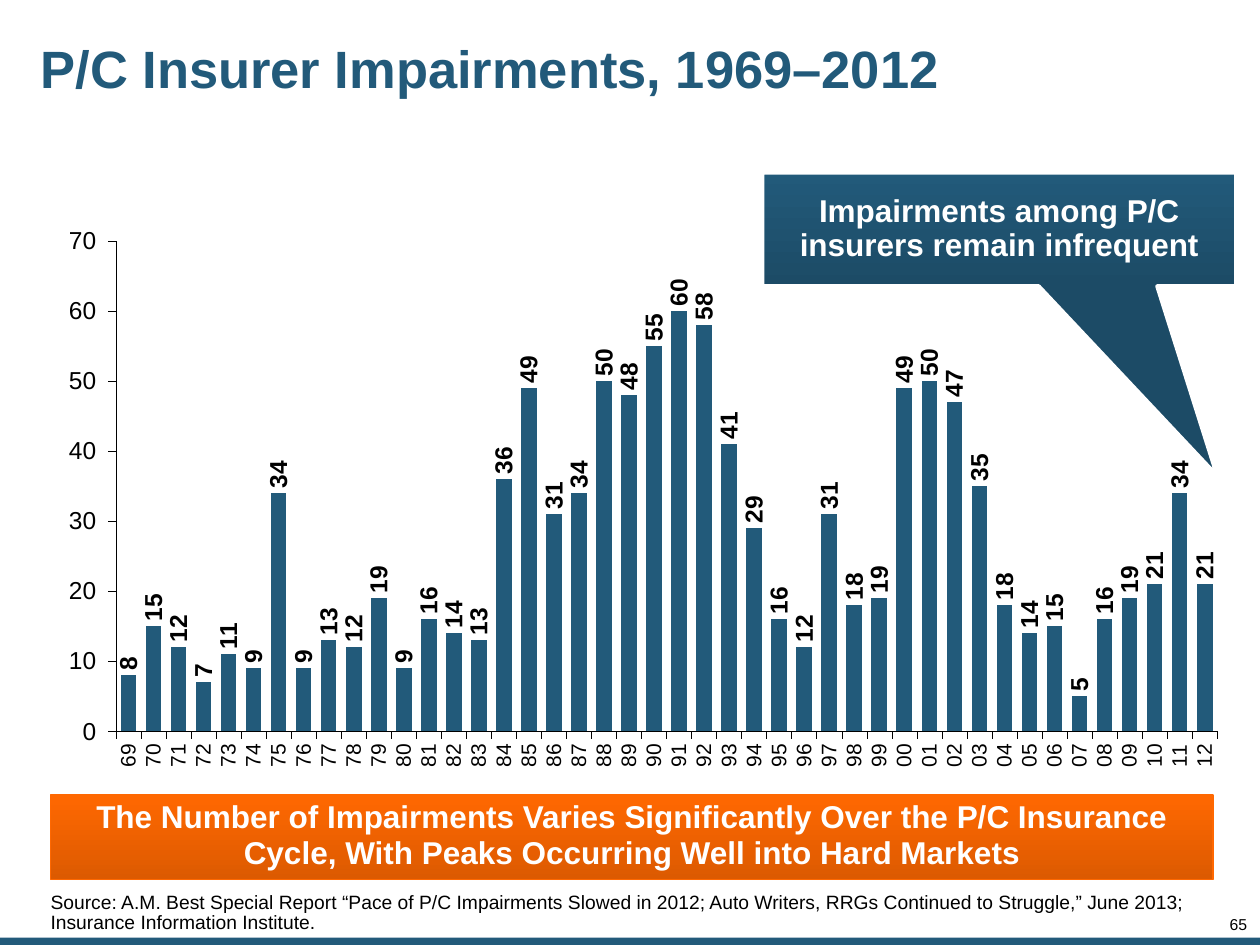
from lxml import etree
from pptx import Presentation
from pptx.chart.data import CategoryChartData
from pptx.dml.color import RGBColor
from pptx.enum.chart import XL_CHART_TYPE, XL_LABEL_POSITION, XL_TICK_MARK
from pptx.enum.shapes import MSO_SHAPE
from pptx.enum.text import MSO_ANCHOR, PP_ALIGN
from pptx.oxml import parse_xml
from pptx.oxml.ns import nsdecls
from pptx.util import Cm, Pt

LEFT, CENTER, RIGHT = PP_ALIGN.LEFT, PP_ALIGN.CENTER, PP_ALIGN.RIGHT
TOP, MIDDLE, BOTTOM = MSO_ANCHOR.TOP, MSO_ANCHOR.MIDDLE, MSO_ANCHOR.BOTTOM
RECTANGLE, CALLOUT = MSO_SHAPE.RECTANGLE, MSO_SHAPE.RECTANGULAR_CALLOUT
TICK_OUTSIDE, TICK_NONE = XL_TICK_MARK.OUTSIDE, XL_TICK_MARK.NONE
FONT = "Arial"
COLORS = {
    "blue": "225A7A", "dark blue": "1C4B66",
    "orange": "FF6801", "dark orange": "DC5A01",
    "black": "000000", "white": "FFFFFF",
}


def color(name):
    return RGBColor.from_string(COLORS[name])


def write_text(shape, text, size, ink="black", bold=False, align=LEFT,
               anchor=MIDDLE, spacing=0.9, insets=(0, 0, 0, 0)):
    """Fill a shape with one paragraph; insets are left, top, right, bottom in cm."""
    frame = shape.text_frame
    frame.word_wrap = True
    frame.vertical_anchor = anchor
    (frame.margin_left, frame.margin_top,
     frame.margin_right, frame.margin_bottom) = [Cm(inset) for inset in insets]
    paragraph = frame.paragraphs[0]
    paragraph.text = text
    paragraph.alignment = align
    paragraph.line_spacing = spacing
    paragraph.space_before = Pt(0)
    font = paragraph.runs[0].font
    font.name, font.size, font.bold = FONT, Pt(size), bold
    font.color.rgb = color(ink)


presentation = Presentation()
presentation.slide_width, presentation.slide_height = Cm(25.4), Cm(19.05)
slide = presentation.slides.add_slide(presentation.slide_layouts[5])
shapes = slide.shapes

# Title
title = shapes.title
title.left, title.top, title.width, title.height = Cm(0.69), Cm(0.25), Cm(20.55), Cm(2.39)
write_text(title, "P/C Insurer Impairments, 1969–2012", 30, ink="blue", bold=True,
           insets=(0.13, 0.13, 0.13, 0.13))

# Bar along the foot of the slide
foot_bar = shapes.add_shape(RECTANGLE, Cm(0), Cm(18.9), Cm(25.4), Cm(0.15))
foot_bar.shadow.inherit = False
foot_bar.fill.solid()
foot_bar.fill.fore_color.rgb = color("blue")
foot_bar.line.fill.background()

# Chart of impairments per year
impairments = [
    8, 15, 12, 7, 11, 9, 34, 9, 13, 12, 19, 9, 16, 14, 13, 36, 49, 31, 34, 50, 48, 55,
    60, 58, 41, 29, 16, 12, 31, 18, 19, 49, 50, 47, 35, 18, 14, 15, 5, 16, 19, 21, 34, 21,
]
chart_data = CategoryChartData()
chart_data.categories = [f"{year % 100:02d}" for year in range(1969, 2013)]
chart_data.add_series("Impairments", impairments)
chart = shapes.add_chart(XL_CHART_TYPE.COLUMN_CLUSTERED, Cm(1.09), Cm(4.42),
                         Cm(23.52), Cm(11.07), chart_data).chart
chart.has_legend = False
chart.has_title = False
chart.font.name, chart.font.size = FONT, Pt(14)
chart.font.color.rgb = color("black")

for axis, size in ((chart.category_axis, 12), (chart.value_axis, 14)):
    axis.has_major_gridlines = False
    axis.major_tick_mark, axis.minor_tick_mark = TICK_OUTSIDE, TICK_NONE
    axis.format.line.width = Pt(0.25)
    axis.format.line.color.rgb = color("black")
    font = axis.tick_labels.font
    font.name, font.size = FONT, Pt(size)
    font.color.rgb = color("black")
value_axis = chart.value_axis
value_axis.minimum_scale, value_axis.maximum_scale, value_axis.major_unit = 0, 70, 10
value_axis.tick_labels.number_format = r"#,##0_);[Red]\(#,##0\)"
value_axis.tick_labels.number_format_is_linked = False

plot = chart.plots[0]
plot.gap_width = 60
plot.vary_by_categories = False
series = plot.series[0]
series.format.fill.solid()
series.format.fill.fore_color.rgb = color("blue")
labels = series.data_labels
labels.show_value = True
labels.position = XL_LABEL_POSITION.OUTSIDE_END
labels.font.name, labels.font.size, labels.font.bold = FONT, Pt(14), True
labels.font.color.rgb = color("black")

# Upright year and value labels
for element in (chart.category_axis._element, labels._element):
    body = element.txPr.bodyPr
    body.set("rot", "-5400000")
    body.set("vert", "horz")

# Fixed inner plot area
plot_area = chart._chartSpace.chart.plotArea
for old_layout in plot_area.findall("{*}layout"):
    plot_area.remove(old_layout)
layout = parse_xml(f"<c:layout {nsdecls('c')}><c:manualLayout/></c:layout>")
settings = [("layoutTarget", "inner"), ("xMode", "edge"), ("yMode", "edge"),
            ("x", "0.053"), ("y", "0.04"), ("w", "0.944"), ("h", "0.893")]
for tag, value in settings:
    etree.SubElement(layout[0], f"{{{layout.nsmap['c']}}}{tag}", val=value)
plot_area.insert(0, layout)

# Source
source = shapes.add_textbox(Cm(0), Cm(17.09), Cm(24.33), Cm(1.96))
write_text(source, "Source: A.M. Best Special Report “Pace of P/C Impairments Slowed in 2012; "
           "Auto Writers, RRGs Continued to Struggle,” June 2013; "
           "Insurance Information Institute.",
           11, anchor=BOTTOM, spacing=0.85, insets=(1.02, 0, 0, 0.23))

# Takeaway banner and callout
banner = shapes.add_shape(RECTANGLE, Cm(1.02), Cm(16.03), Cm(23.44), Cm(1.7))
write_text(banner, "The Number of Impairments Varies Significantly Over the P/C Insurance "
           "Cycle, With Peaks Occurring Well into Hard Markets",
           18, ink="white", bold=True, align=CENTER, spacing=0.95,
           insets=(0.25, 0.13, 0.25, 0.18))
callout = shapes.add_shape(CALLOUT, Cm(15.37), Cm(3.48), Cm(9.55), Cm(2.29))
callout.adjustments[0], callout.adjustments[1] = 0.46, 2.17
write_text(callout, "Impairments among P/C insurers remain infrequent",
           18, ink="white", bold=True, align=CENTER, insets=(0.25, 0.25, 0.25, 0.25))

for shape, start, end, outline, width in (
    (banner, "orange", "dark orange", "orange", 1),
    (callout, "blue", "dark blue", "white", 2.25),
):
    shape.shadow.inherit = False
    shape.fill.gradient()
    shape.fill.gradient_angle = 270
    for stop, position, name in zip(shape.fill.gradient_stops, (0, 1), (start, end)):
        stop.position = position
        stop.color.rgb = color(name)
    shape.line.color.rgb = color(outline)
    shape.line.width = Pt(width)

# Page number
page_number = shapes.add_textbox(Cm(23.9), Cm(18.49), Cm(1.24), Cm(0.33))
write_text(page_number, "65", 9, align=RIGHT, anchor=TOP, spacing=0.85)

presentation.save("out.pptx")
